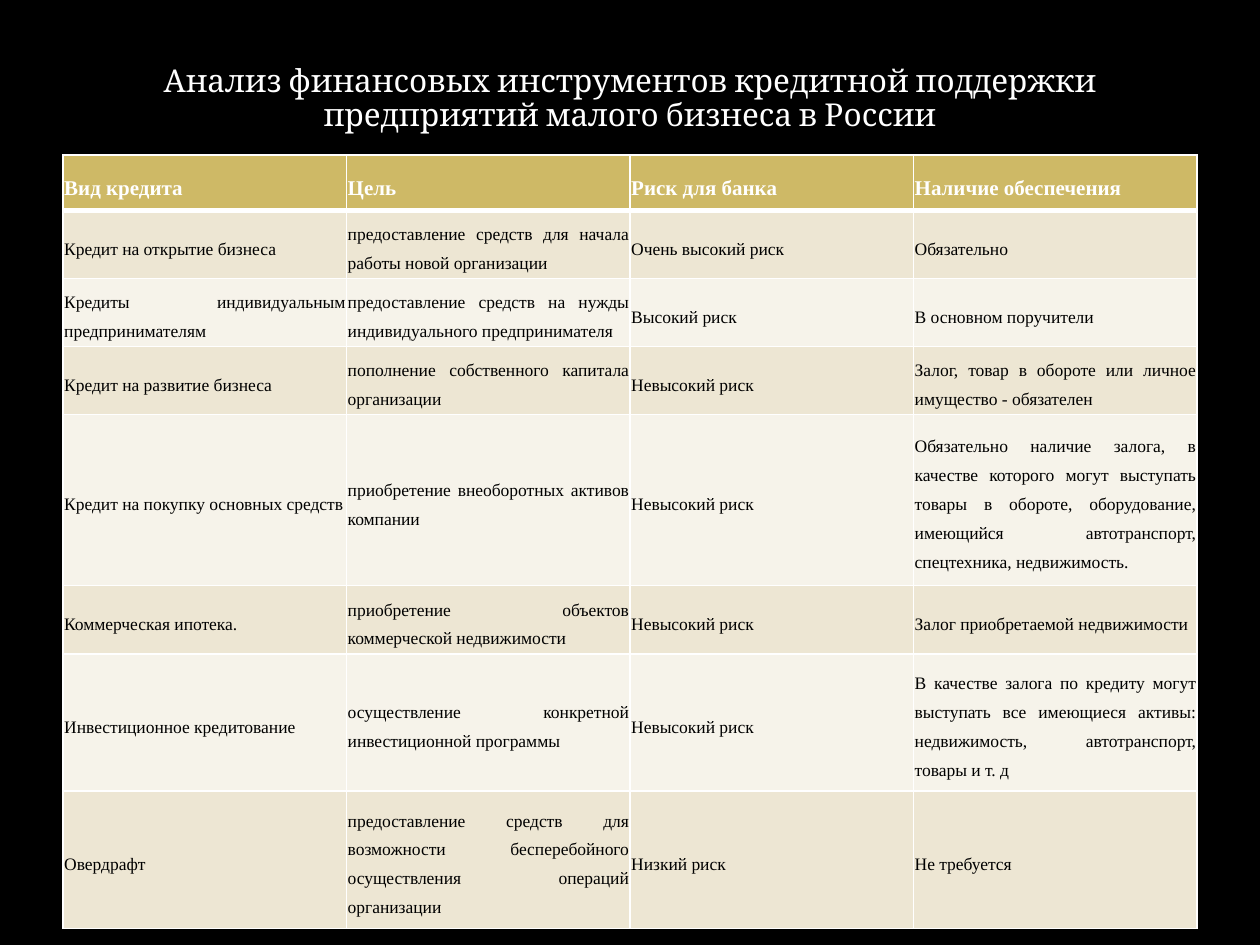
from lxml.etree import SubElement
from pptx import Presentation
from pptx.dml.color import RGBColor
from pptx.enum.text import MSO_ANCHOR as Anchor, MSO_AUTO_SIZE as Fit, PP_ALIGN as Align
from pptx.oxml import parse_xml
from pptx.oxml.ns import nsdecls, qn
from pptx.util import Inches, Pt

BLACK = RGBColor(0x00, 0x00, 0x00)
WHITE = RGBColor(0xFF, 0xFF, 0xFF)
GOLD = RGBColor(0xCE, 0xB9, 0x66)
SAND = RGBColor(0xED, 0xE6, 0xD3)
CREAM = RGBColor(0xF6, 0xF3, 0xEA)

TITLE = "Анализ финансовых инструментов кредитной поддержки предприятий малого бизнеса в России"
HEIGHTS = [0.44, 0.54, 0.54, 0.54, 1.36, 0.54, 1.09, 1.09]
LOANS = [
    ["Вид кредита", "Цель", "Риск для банка", "Наличие обеспечения"],
    ["Кредит на открытие бизнеса",
     "предоставление средств для начала работы новой организации",
     "Очень высокий риск", "Обязательно"],
    ["Кредиты индивидуальным предпринимателям",
     "предоставление средств на нужды индивидуального предпринимателя",
     "Высокий риск", "В основном поручители"],
    ["Кредит на развитие бизнеса",
     "пополнение собственного капитала организации",
     "Невысокий риск",
     "Залог, товар в обороте или личное имущество - обязателен"],
    ["Кредит на покупку основных средств",
     "приобретение внеоборотных активов компании",
     "Невысокий риск",
     "Обязательно наличие залога, в качестве которого могут выступать товары "
     "в обороте, оборудование, имеющийся автотранспорт, спецтехника, недвижимость."],
    ["Коммерческая ипотека.",
     "приобретение объектов коммерческой недвижимости",
     "Невысокий риск", "Залог приобретаемой недвижимости"],
    ["Инвестиционное кредитование",
     "осуществление конкретной инвестиционной программы",
     "Невысокий риск",
     "В качестве залога по кредиту могут выступать все имеющиеся активы: "
     "недвижимость, автотранспорт, товары и т. д"],
    ["Овердрафт",
     "предоставление средств для возможности бесперебойного осуществления "
     "операций организации",
     "Низкий риск", "Не требуется"],
]


def style(para, face, size, color, bold=False):
    for run in para.runs:
        font = run.font
        font.name, font.size, font.bold = face, Pt(size), bold
        font.color.rgb = color


def set_title(slide):
    title = slide.shapes.title
    title.left, title.top = Inches(0.5), Inches(0.3)
    title.width, title.height = Inches(9), Inches(1.25)
    frame = title.text_frame
    frame.text = TITLE
    frame.word_wrap = True
    frame.auto_size = Fit.NONE
    frame.vertical_anchor = Anchor.MIDDLE
    # Lift the two lines clear of the table
    frame.margin_bottom = Inches(0.33)
    para = frame.paragraphs[0]
    para.alignment = Align.CENTER
    para.line_spacing = 0.9
    style(para, "Cambria", 18, WHITE)


def set_edges(cell, top, bottom):
    props = cell._tc.get_or_add_tcPr()
    widths = {"lnL": 1, "lnR": 1, "lnT": top, "lnB": bottom}
    for spot, (tag, width) in enumerate(widths.items()):
        line = parse_xml(f'<a:{tag} {nsdecls("a")} w="{Pt(width)}"/>')
        fill = SubElement(line, qn("a:solidFill"))
        SubElement(fill, qn("a:srgbClr"), val=str(WHITE))
        props.insert(spot, line)


def fill_cell(cell, text, row):
    head = row == 0
    cell.margin_left = cell.margin_right = Inches(0.01)
    cell.margin_top = cell.margin_bottom = Inches(0.01)
    cell.vertical_anchor = Anchor.MIDDLE
    cell.fill.solid()
    cell.fill.fore_color.rgb = GOLD if head else SAND if row % 2 else CREAM
    # A thick rule parts the header from the body
    set_edges(cell, 3 if row == 1 else 1, 3 if head else 1)
    cell.text_frame.text = text
    para = cell.text_frame.paragraphs[0]
    para.alignment = Align.JUSTIFY
    para.line_spacing = 1.5
    para.space_after = Pt(10)
    style(para, "Times New Roman", 12 if head else 10, WHITE if head else BLACK, head)


def add_loans(slide):
    frame = slide.shapes.add_table(len(LOANS), len(LOANS[0]), Inches(0.5),
                                   Inches(1.23), Inches(9), Inches(sum(HEIGHTS)))
    table = frame.table
    for row, (texts, height) in enumerate(zip(LOANS, HEIGHTS)):
        table.rows[row].height = Inches(height)
        for col, text in enumerate(texts):
            fill_cell(table.cell(row, col), text, row)


def main():
    deck = Presentation()
    deck.slide_width, deck.slide_height = Inches(10), Inches(7.5)
    slide = deck.slides.add_slide(deck.slide_layouts[5])
    back = slide.background.fill
    back.solid()
    back.fore_color.rgb = BLACK
    set_title(slide)
    add_loans(slide)
    deck.save("out.pptx")


if __name__ == "__main__":
    main()
